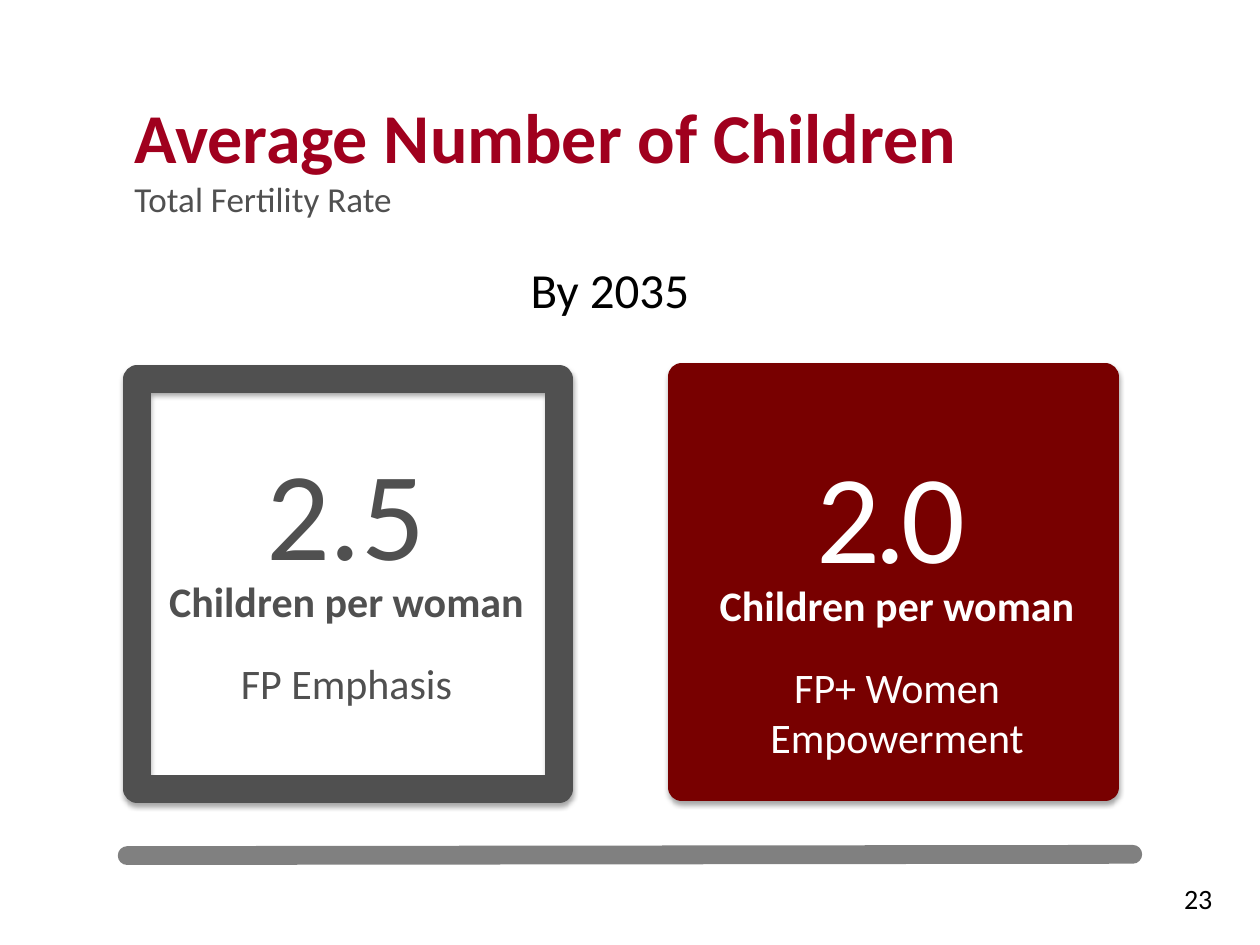
from lxml.etree import SubElement
from pptx import Presentation
from pptx.dml.color import RGBColor
from pptx.enum.shapes import MSO_CONNECTOR, MSO_SHAPE
from pptx.enum.text import MSO_ANCHOR, PP_ALIGN
from pptx.oxml.ns import qn
from pptx.util import Pt

COLORS = {
    "title": "A0001E",
    "gray": "505050",
    "maroon": "780000",
    "rule": "808080",
    "white": "FFFFFF",
    "black": "000000",
}


def rgb(name):
    return RGBColor.from_string(COLORS[name])


def add_frame(slide, left, top, width, height, anchor=MSO_ANCHOR.TOP, bottom_inset=3.6):
    frame = slide.shapes.add_textbox(Pt(left), Pt(top), Pt(width), Pt(height)).text_frame
    frame.word_wrap = True
    frame.vertical_anchor = anchor
    frame.margin_bottom = Pt(bottom_inset)
    return frame


def write(frame, text, size, color, bold=False, align=PP_ALIGN.CENTER, after=0, spacing=None):
    first = frame.paragraphs[0]
    paragraph = frame.add_paragraph() if first.runs else first
    paragraph.alignment = align
    paragraph.space_after = Pt(after)
    run = paragraph.add_run()
    run.text = text
    run.font.name = "Calibri"
    run.font.size = Pt(size)
    run.font.bold = bold
    run.font.color.rgb = rgb(color)
    if spacing is not None:
        run.font._element.set("spc", str(round(spacing * 100)))


def add_shadow(card):
    effects = SubElement(card._element.spPr, qn("a:effectLst"))
    shadow = SubElement(effects, qn("a:outerShdw"), blurRad=str(Pt(3.1)),
                        dist=str(Pt(1.8)), dir="5400000", rotWithShape="0")
    shade = SubElement(shadow, qn("a:srgbClr"), val=COLORS["black"])
    SubElement(shade, qn("a:alpha"), val="35000")


def add_header(slide, left, top, width, height):
    heading = add_frame(slide, left, top, width, height, MSO_ANCHOR.BOTTOM, 27)
    write(heading, "Average Number of Children", 40, "title", bold=True, align=PP_ALIGN.LEFT)
    write(heading, "Total Fertility Rate", 20, "gray", align=PP_ALIGN.LEFT)


def add_year(slide, left, top, width, height):
    write(add_frame(slide, left, top, width, height), "By 2035", 28, "black")


def add_card(slide, left, top, width, height, rate, scenario, border, ink,
             rate_box, caption_box, filled=False, spacing=None):
    card = slide.shapes.add_shape(MSO_SHAPE.RECTANGLE, Pt(left), Pt(top), Pt(width), Pt(height))
    if filled:
        card.fill.solid()
        card.fill.fore_color.rgb = rgb(border)
    else:
        card.fill.background()
    card.line.color.rgb = rgb(border)
    card.line.width = Pt(16)
    SubElement(card.line._get_or_add_ln(), qn("a:round"))
    add_shadow(card)

    dx, dy, caption_width, caption_height = caption_box
    caption = add_frame(slide, left + dx, top + dy, caption_width, caption_height)
    write(caption, "Children per woman", 24, ink, bold=True, after=18)
    write(caption, scenario, 24, ink, after=6)

    dx, dy, rate_width, rate_height = rate_box
    figure = add_frame(slide, left + dx, top + dy, rate_width, rate_height)
    write(figure, rate, 72, ink, spacing=spacing)


def add_footer(slide, left, top, width, height):
    rule = slide.shapes.add_connector(
        MSO_CONNECTOR.STRAIGHT, Pt(left), Pt(top + 0.7), Pt(left + width), Pt(top))
    rule.line.color.rgb = rgb("rule")
    rule.line.width = Pt(10.75)
    rule.line._get_or_add_ln().set("cap", "rnd")
    SubElement(rule._element.spPr, qn("a:effectLst"))
    number_width = 83.5
    number = add_frame(slide, left + width + 52.6 - number_width, top + 12.2,
                       number_width, height - 12.2)
    write(number, "23", 16, "black", align=PP_ALIGN.RIGHT)


def main():
    deck = Presentation()
    deck.slide_width, deck.slide_height = Pt(720), Pt(540)
    slide = deck.slides.add_slide(deck.slide_layouts[6])
    add_header(slide, 69.8, 63.4, 580.3, 89.3)
    add_year(slide, 186.5, 144.7, 324, 41)
    add_footer(slide, 72.7, 488.2, 574.6, 31.6)
    add_card(slide, 78.5, 216.7, 241.2, 234, "2.5", "FP Emphasis", "gray", "gray",
             rate_box=(22.3, 28.1, 193.7, 181.4), caption_box=(10.8, 108.7, 217.4, 111.6))
    add_card(slide, 389.5, 215.3, 241.9, 234.7, "2.0", "FP+ Women Empowerment",
             "maroon", "white", rate_box=(31, 30.9, 177.1, 181.4),
             caption_box=(14.4, 112.3, 217.4, 175.7), filled=True, spacing=-3)
    deck.save("out.pptx")


if __name__ == "__main__":
    main()
